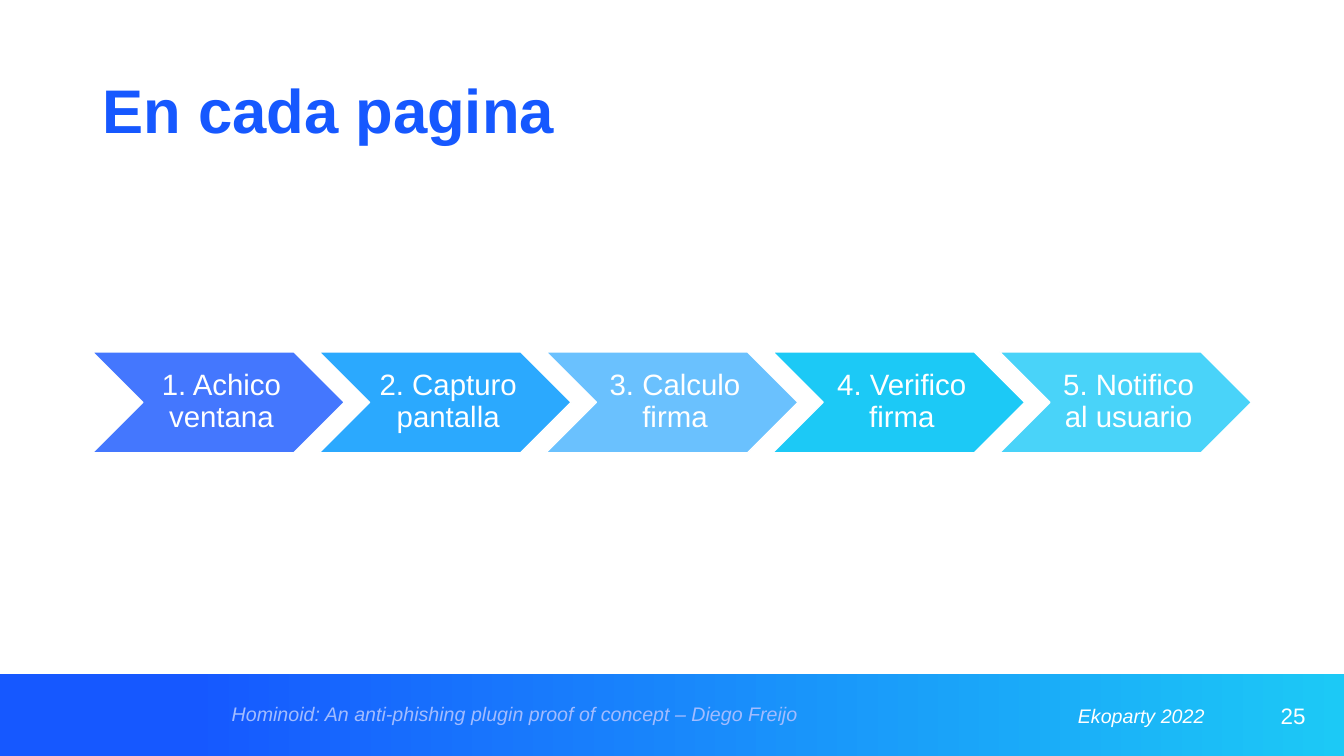
from pptx import Presentation
from pptx.dml.color import RGBColor
from pptx.enum.shapes import MSO_SHAPE as Shape
from pptx.enum.text import MSO_ANCHOR as Anchor, MSO_AUTO_SIZE as AutoSize, PP_ALIGN as Align
from pptx.util import Inches, Pt

BLUE = RGBColor(0x16, 0x58, 0xFF)
CYAN = RGBColor(0x1C, 0xC9, 0xF6)
PALE_BLUE = RGBColor(0xA2, 0xBC, 0xFF)
WHITE = RGBColor(0xFF, 0xFF, 0xFF)

STEPS = [
    ("1. Achico ventana", RGBColor(0x44, 0x77, 0xFE)),
    ("2. Capturo pantalla", RGBColor(0x2B, 0xA9, 0xFE)),
    ("3. Calculo firma", RGBColor(0x6A, 0xC1, 0xFE)),
    ("4. Verifico firma", CYAN),
    ("5. Notifico al usuario", RGBColor(0x49, 0xD3, 0xF9)),
]


def write_text(frame, text, size, color=WHITE, align=Align.LEFT, bold=False,
               italic=False, line_spacing=1.0, margins=(0.1, 0.05, 0.1, 0.05)):
    """Fill a text frame with one formatted, vertically centred paragraph."""
    frame.word_wrap = True
    frame.auto_size = AutoSize.NONE
    frame.vertical_anchor = Anchor.MIDDLE
    (frame.margin_left, frame.margin_top,
     frame.margin_right, frame.margin_bottom) = map(Inches, margins)
    paragraph = frame.paragraphs[0]
    paragraph.alignment = align
    paragraph.line_spacing = line_spacing
    run = paragraph.add_run()
    run.text = text
    font = run.font
    font.name, font.size, font.bold, font.italic = "Arial", Pt(size), bold, italic
    font.color.rgb = color


class SlideBuilder:
    """Draw elements on a slide divided into 160 columns and 90 rows."""

    COLUMNS, ROWS = 160, 90

    def __init__(self, presentation):
        """Add a title-only slide and measure its grid."""
        self.column = presentation.slide_width / self.COLUMNS
        self.row = presentation.slide_height / self.ROWS
        self.slide = presentation.slides.add_slide(presentation.slide_layouts[5])

    def box(self, left, top, width, height):
        """Turn grid units into slide lengths."""
        return (round(left * self.column), round(top * self.row),
                round(width * self.column), round(height * self.row))

    def title(self, text, *place):
        """Move and write the title placeholder."""
        title = self.slide.shapes.title
        title.left, title.top, title.width, title.height = self.box(*place)
        write_text(title.text_frame, text, 44, BLUE, bold=True, line_spacing=0.9)

    def text(self, text, *place, **style):
        """Add a text box."""
        shape = self.slide.shapes.add_textbox(*self.box(*place))
        write_text(shape.text_frame, text, **style)

    def gradient_band(self, *place):
        """Add a band that runs from blue to cyan."""
        band = self.slide.shapes.add_shape(Shape.RECTANGLE, *self.box(*place))
        band.shadow.inherit = False
        band.line.fill.background()
        band.fill.gradient()
        band.fill.gradient_angle = 0
        for stop, position, color in zip(band.fill.gradient_stops, (0.14, 1), (BLUE, CYAN)):
            stop.position = position
            stop.color.rgb = color

    def chevron(self, text, color, *place):
        """Add a labelled process step."""
        chevron = self.slide.shapes.add_shape(Shape.CHEVRON, *self.box(*place))
        chevron.shadow.inherit = False
        chevron.fill.solid()
        chevron.fill.fore_color.rgb = color
        chevron.line.color.rgb = WHITE
        chevron.line.width = Pt(1)
        write_text(chevron.text_frame, text, 21, align=Align.CENTER,
                   line_spacing=0.9, margins=(0.09, 0.03, 0.03, 0.03))


def main():
    """Build and save the slide."""
    presentation = Presentation()
    presentation.slide_width, presentation.slide_height = Inches(13.33), Inches(7.5)
    builder = SlideBuilder(presentation)

    builder.gradient_band(0, 80.25, 160, 9.75)
    builder.title("En cada pagina", 11, 4.8, 138, 17.4)
    for index, (label, color) in enumerate(STEPS):
        builder.chevron(label, color, 11 + 27 * index, 41.9, 30, 12)

    footer_top, footer_height = 82.8, 4.8
    builder.text("Hominoid: An anti-phishing plugin proof of concept – Diego Freijo",
                 26.4, footer_top, 91.9, footer_height,
                 size=14, color=PALE_BLUE, italic=True, line_spacing=0.9)
    builder.text("Ekoparty 2022", 120.5, footer_top, 24.1, footer_height,
                 size=14, align=Align.RIGHT, italic=True)
    builder.text("25", 147.1, footer_top, 9.5, footer_height,
                 size=16, align=Align.RIGHT)
    presentation.save("out.pptx")


if __name__ == "__main__":
    main()
